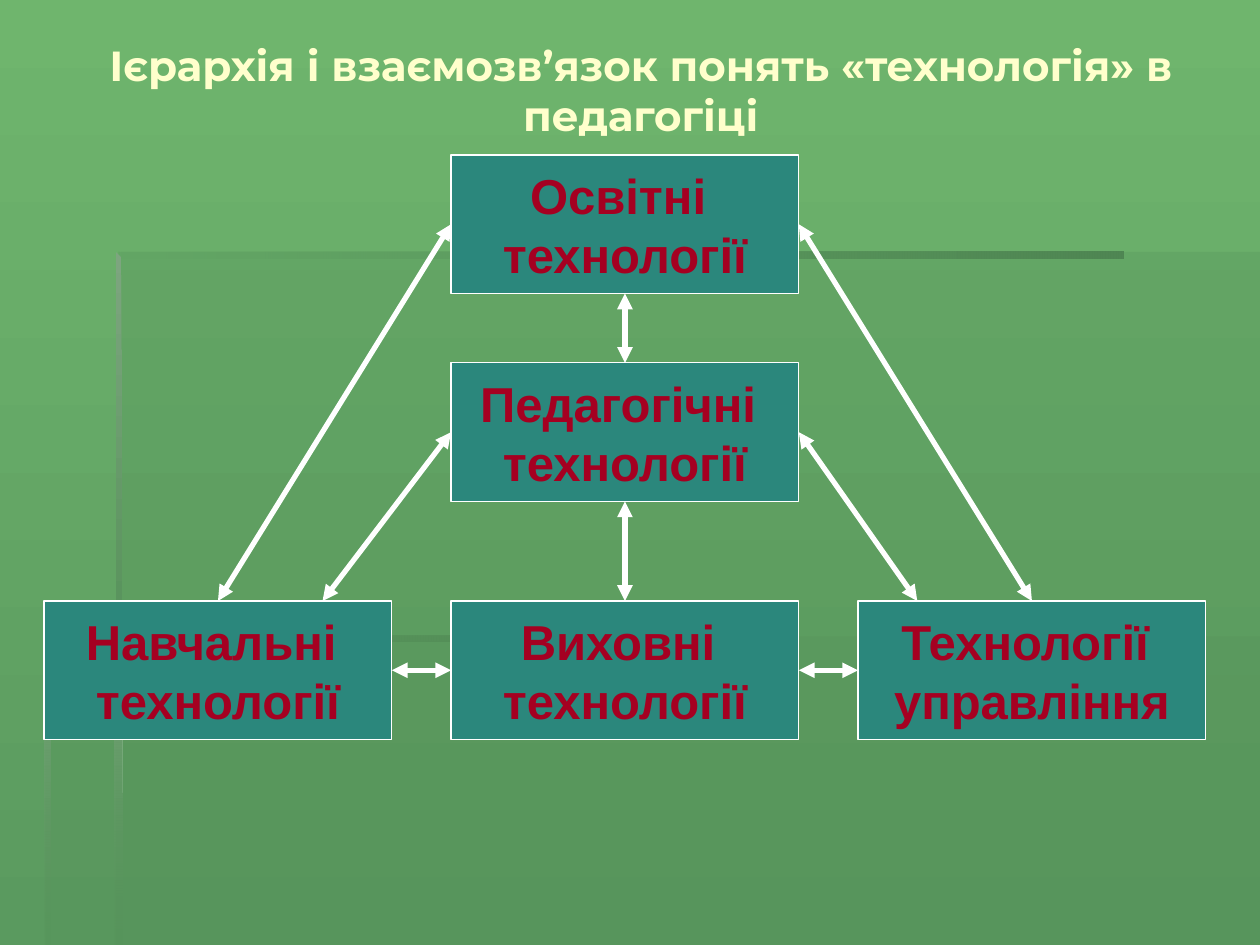
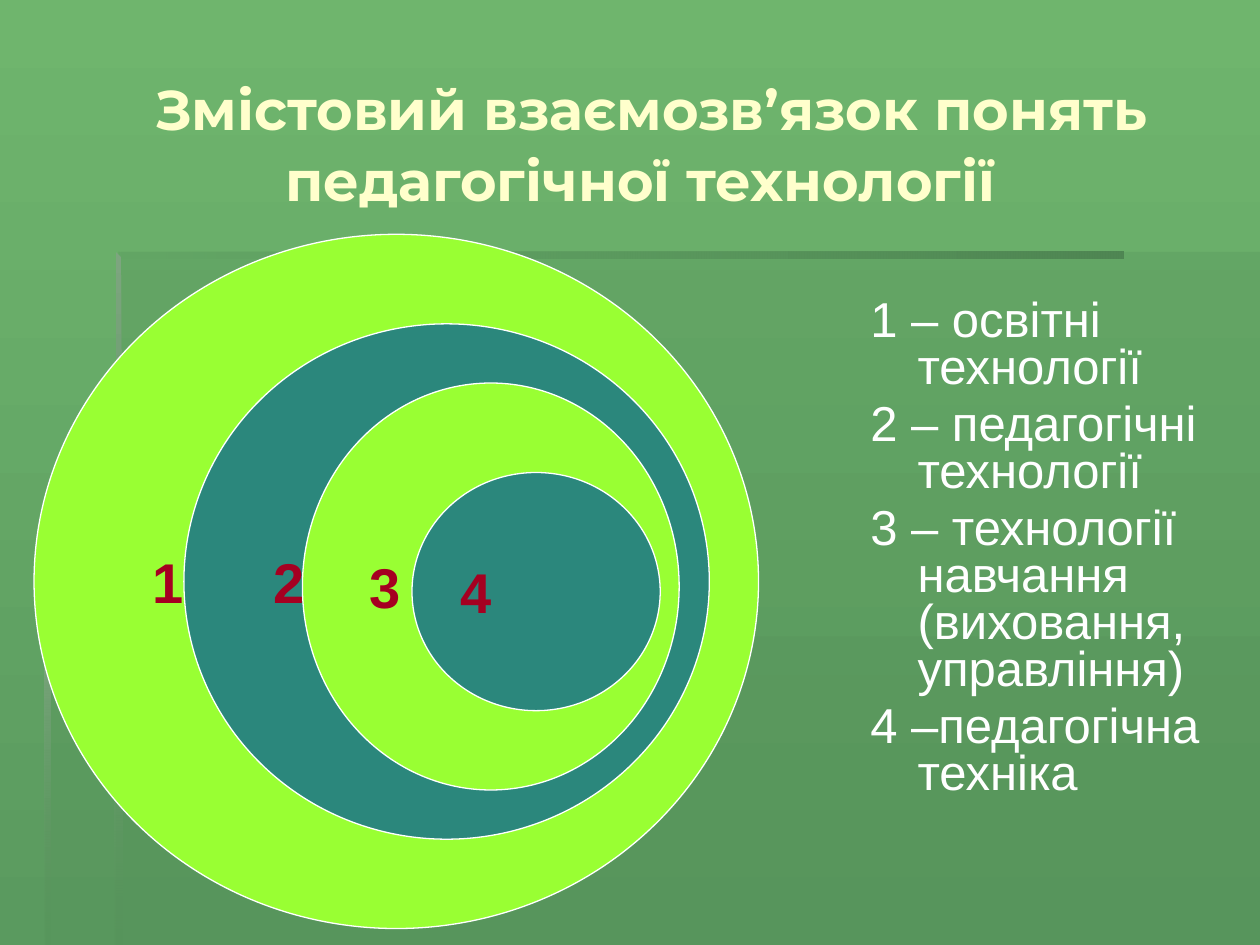
from dataclasses import dataclass
from typing import Optional

from lxml.etree import SubElement
from pptx import Presentation
from pptx.dml.color import RGBColor
from pptx.enum.shapes import MSO_CONNECTOR as Connector, MSO_SHAPE as Preset
from pptx.enum.text import MSO_ANCHOR as Anchor, MSO_AUTO_SIZE as AutoSize, PP_ALIGN as Align
from pptx.oxml.ns import qn
from pptx.util import Inches, Pt

SLIDE_WIDTH, SLIDE_HEIGHT = Inches(10), Inches(7.5)
COLUMNS, ROWS = 100, 75

SKY, MEADOW = "6FB56D", "5A9A5F"
MOSS, FOREST, SAGE = "56925A", "4F8653", "7DA57F"
CREAM, WHITE, CRIMSON = "FFFFCC", "FFFFFF", "A50021"
TEAL, LIME = "2B877C", "99FF33"
TITLE_FONT, BODY_FONT = "Montserrat", "Arial"

TOP, LEFT, BOTTOM, RIGHT = range(4)


@dataclass(frozen=True)
class Area:
    column: float
    row: float
    columns: float
    rows: float

    def lengths(self) -> tuple:
        return across(self.column), down(self.row), across(self.columns), down(self.rows)


@dataclass(frozen=True)
class Panel:
    outline: tuple
    colors: tuple
    opacities: tuple
    angle: int = 0


@dataclass(frozen=True)
class Concept:
    lines: tuple
    column: int
    row: int


@dataclass(frozen=True)
class Link:
    start: str
    start_side: int
    end: str
    end_side: int
    end_column: Optional[float] = None


@dataclass(frozen=True)
class Ring:
    number: str
    area: Area
    color: str


def bar(column: float, row: float, columns: float, rows: float) -> tuple:
    right, bottom = column + columns, row + rows
    return (column, row), (right, row), (right, bottom), (column, bottom)


PANELS = (
    Panel(bar(9.2, 50.5, 90.8, 24.5), (MOSS,), (30,)),
    Panel(((9.4, 50.6), (3.6, 50.6), (3.6, 75), (100, 75), (100, 20), (9.4, 20)), (MOSS,), (30,)),
    Panel(bar(9.2, 20, 80, 0.5), (MOSS, FOREST), (0, 100)),
    Panel(((9.2, 20), (9.2, 51), (9.7, 51), (9.6, 20.4)), (SAGE, MOSS), (100, 100), 270),
    Panel(((9.1, 75), (9.7, 75), (9.6, 50.8), (9.1, 50.4)), (SAGE, MOSS), (100, 0), 270),
    Panel(bar(3.5, 50.4, 50, 0.5), (MOSS, FOREST), (0, 100)),
    Panel(((3.5, 50.4), (3.5, 75), (4, 75), (4, 50.9)), (SAGE, MOSS), (100, 10), 270),
)

CONCEPT_LEFT, CONCEPT_PITCH = 3.5, 32.3
CONCEPT_COLUMNS, CONCEPT_ROWS = 27.6, 11
CONCEPT_TOPS = (12.3, 28.8, 47.7)
CONCEPTS = {
    "education": Concept(("Освітні ", "технології"), 1, 0),
    "pedagogy": Concept(("Педагогічні ", "технології"), 1, 1),
    "teaching": Concept(("Навчальні ", "технології"), 0, 2),
    "upbringing": Concept(("Виховні ", "технології"), 1, 2),
    "management": Concept(("Технології ", "управління"), 2, 2),
}
LINKS = (
    Link("education", BOTTOM, "pedagogy", TOP),
    Link("pedagogy", BOTTOM, "upbringing", TOP),
    Link("teaching", RIGHT, "upbringing", LEFT),
    Link("upbringing", RIGHT, "management", LEFT),
    Link("education", LEFT, "teaching", TOP),
    Link("education", RIGHT, "management", TOP),
    Link("pedagogy", LEFT, "teaching", TOP, 25.6),
    Link("pedagogy", RIGHT, "management", TOP, 72.8),
)

RINGS = (
    Ring("1", Area(2.7, 18.6, 57.5, 55.1), LIME),
    Ring("2", Area(14.6, 25.7, 41.7, 40.9), TEAL),
    Ring("3", Area(24, 30.4, 29.9, 32.3), LIME),
    Ring("4", Area(32.7, 37.5, 19.7, 18.9), TEAL),
)
LEGEND = (
    "1 – освітні технології",
    "2 – педагогічні технології",
    "3 – технології навчання (виховання, управління)",
    "4 –педагогічна техніка",
)


def across(columns: float) -> int:
    return round(SLIDE_WIDTH * columns / COLUMNS)


def down(rows: float) -> int:
    return round(SLIDE_HEIGHT * rows / ROWS)


def color(code: str) -> RGBColor:
    return RGBColor.from_string(code)


def fill_with(fill, colors: tuple, angle: int = 0) -> None:
    if len(colors) == 1:
        fill.solid()
        fill.fore_color.rgb = color(colors[0])
        return
    fill.gradient()
    fill.gradient_angle = angle
    for stop, code in zip(fill.gradient_stops, colors):
        stop.color.rgb = color(code)


def style_text(paragraph, size: float, code: str, font: str, bold: bool, align) -> None:
    paragraph.alignment = align
    paragraph.font.size = Pt(size)
    paragraph.font.name = font
    paragraph.font.bold = bold
    paragraph.font.color.rgb = color(code)


def draw_panel(slide, panel: Panel):
    points = [(across(column), down(row)) for column, row in panel.outline]
    builder = slide.shapes.build_freeform(*points[0], scale=1.0)
    builder.add_line_segments(points[1:], close=True)
    shape = builder.convert_to_shape()
    shape.shadow.inherit = False
    shape.line.fill.background()
    fill_with(shape.fill, panel.colors, panel.angle)
    for tint, opacity in zip(shape.element.iter(qn("a:srgbClr")), panel.opacities):
        SubElement(tint, qn("a:alpha")).set("val", str(opacity * 1000))
    return shape


def set_backdrop(deck, layout, slide) -> None:
    fill_with(deck.slide_master.background.fill, (SKY, MEADOW), 270)
    for panel in PANELS:
        layout.shapes.element.append(draw_panel(slide, panel).element)


def set_title(slide, area: Area, runs: tuple) -> None:
    title = slide.shapes.title
    title.left, title.top, title.width, title.height = area.lengths()
    frame = title.text_frame
    frame.auto_size = AutoSize.NONE
    frame.word_wrap = True
    frame.vertical_anchor = Anchor.MIDDLE
    heading = frame.paragraphs[0]
    style_text(heading, runs[-1][1], CREAM, TITLE_FONT, True, Align.CENTER)
    for words, size in runs:
        run = heading.add_run()
        run.text = words
        if len(runs) > 1:
            run.font.size = Pt(size)


def draw_label(slide, preset, area: Area, code: str, lines: tuple, size: float, align):
    shape = slide.shapes.add_shape(preset, *area.lengths())
    shape.shadow.inherit = False
    fill_with(shape.fill, (code,))
    shape.line.color.rgb = color(WHITE)
    shape.line.width = Pt(0.75)
    frame = shape.text_frame
    frame.word_wrap = False
    frame.vertical_anchor = Anchor.MIDDLE
    frame.text = "\n".join(lines)
    for paragraph in frame.paragraphs:
        style_text(paragraph, size, CRIMSON, BODY_FONT, True, align)
    return shape


def draw_concept(slide, concept: Concept):
    area = Area(CONCEPT_LEFT + concept.column * CONCEPT_PITCH, CONCEPT_TOPS[concept.row],
                CONCEPT_COLUMNS, CONCEPT_ROWS)
    return draw_label(slide, Preset.RECTANGLE, area, TEAL, concept.lines, 28, Align.CENTER)


def draw_link(slide, link: Link, boxes: dict) -> None:
    end_box = boxes[link.end]
    end_x = across(link.end_column or 0)
    arrow = slide.shapes.add_connector(Connector.STRAIGHT, 0, 0, end_x, end_box.top)
    arrow.begin_connect(boxes[link.start], link.start_side)
    if link.end_column is None:
        arrow.end_connect(end_box, link.end_side)
    arrow.line.color.rgb = color(WHITE)
    arrow.line.width = Pt(3)
    properties = arrow.element.spPr
    stroke = properties.find(qn("a:ln"))
    for tip in ("a:headEnd", "a:tailEnd"):
        SubElement(stroke, qn(tip)).set("type", "triangle")
    SubElement(properties, qn("a:effectLst"))


def draw_legend(slide, area: Area) -> None:
    legend = slide.shapes.add_textbox(*area.lengths())
    frame = legend.text_frame
    frame.word_wrap = True
    frame.text = "\n".join(LEGEND)
    for paragraph in frame.paragraphs:
        style_text(paragraph, 28, WHITE, BODY_FONT, False, Align.LEFT)
        paragraph.line_spacing = 0.8
        paragraph.space_before = Pt(5.6)
    hanging = across(3.75)
    for properties in legend.element.iter(qn("a:pPr")):
        properties.set("marL", str(hanging))
        properties.set("indent", str(-hanging))


def build_hierarchy(slide) -> None:
    set_title(slide, Area(5, 2.7, 91.7, 8.8),
              (("Ієрархія і взаємозв’язок понять «технологія» в педагогіці", 24),))
    boxes = {key: draw_concept(slide, concept) for key, concept in CONCEPTS.items()}
    for link in LINKS:
        draw_link(slide, link, boxes)


def build_nesting(slide) -> None:
    set_title(slide, Area(5, 2.7, 91.7, 15.7),
              ((" ", 44), ("Змістовий взаємозв’язок понять педагогічної технології", 32)))
    draw_legend(slide, Area(68.1, 23.3, 29.4, 42.5))
    for ring in RINGS:
        draw_label(slide, Preset.OVAL, ring.area, ring.color, (ring.number,), 32, Align.LEFT)


def main() -> None:
    deck = Presentation()
    deck.slide_width, deck.slide_height = SLIDE_WIDTH, SLIDE_HEIGHT
    layout = deck.slide_layouts.get_by_name("Title Only")
    hierarchy, nesting = (deck.slides.add_slide(layout) for _ in range(2))
    set_backdrop(deck, layout, hierarchy)
    build_hierarchy(hierarchy)
    build_nesting(nesting)
    deck.save("out.pptx")


if __name__ == "__main__":
    main()
